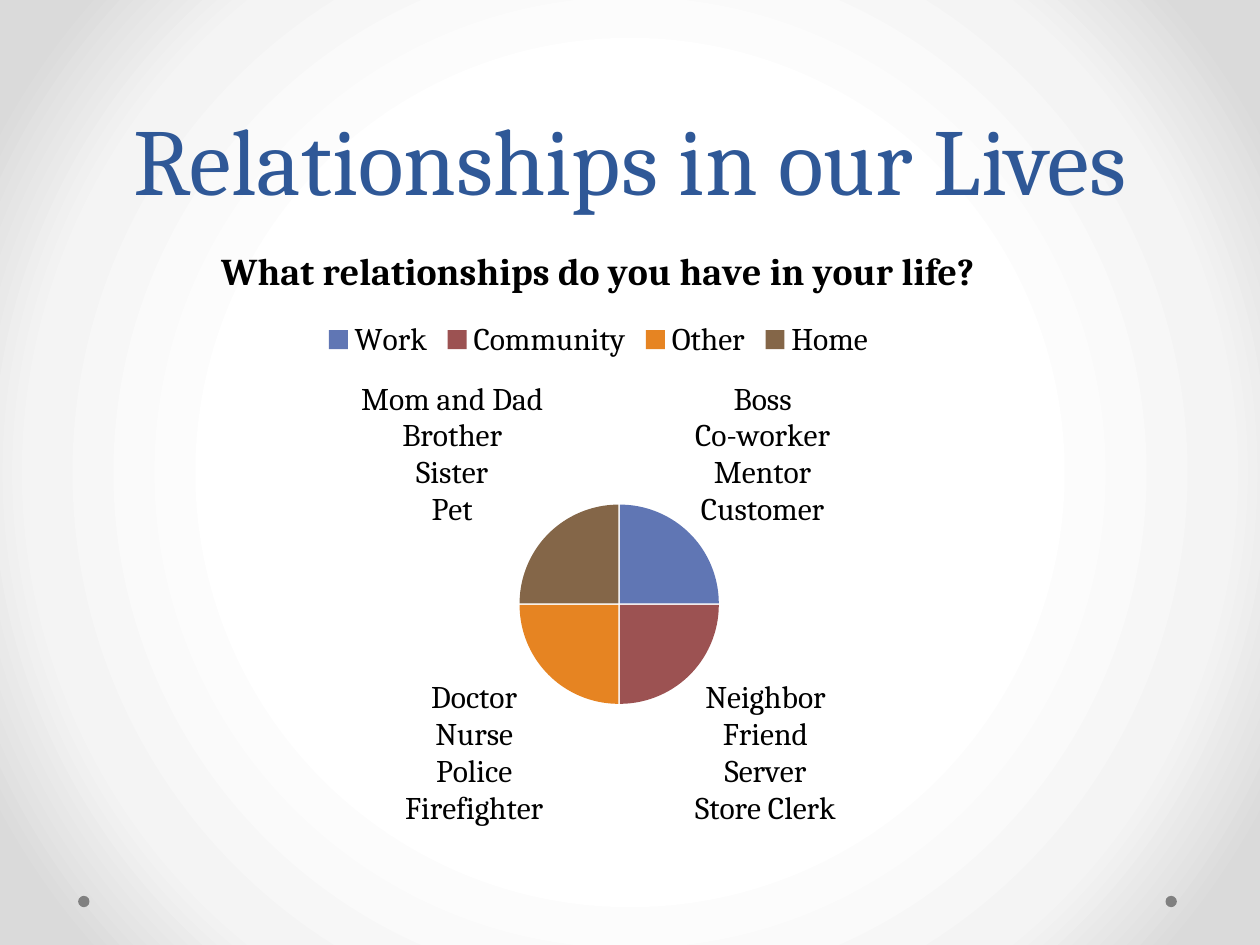
import pptx
import pptx.util
import pptx.chart.data
import pptx.dml.color
import pptx.enum.chart
import pptx.enum.shapes
import pptx.enum.text
import pptx.oxml
import pptx.oxml.ns

Inches = pptx.util.Inches
Pt = pptx.util.Pt

FONT = "Cambria"
COLORS = {
    "title": "2F5897",
    "text": "000000",
    "dot": "808080",
    "work": "6076B4",
    "community": "9C5252",
    "other": "E68422",
    "home": "846648",
}
BACKGROUND_STOPS = [(50, "FFFFFF"), (76, "F4F4F4"), (92, "DADADA")]
TITLE = "Relationships in our Lives"
CHART_TITLE = "What relationships do you have in your life?"
RELATIONSHIPS = [
    ("Work", 25, "work", ["Boss", "Co-worker", "Mentor", "Customer"]),
    ("Community", 25, "community", ["Neighbor", "Friend", "Server", "Store Clerk"]),
    ("Other", 25, "other", ["Doctor", "Nurse", "Police", "Firefighter"]),
    ("Home", 25, "home", ["Mom and Dad", "Brother", "Sister", "Pet"]),
]
DOT_LEFTS = [9.25, 0.62]


def rgb(name):
    return pptx.dml.color.RGBColor.from_string(COLORS[name])


def style_font(font, size, color, bold=False):
    font.name = FONT
    font.size = Pt(size)
    font.bold = bold
    font.color.rgb = rgb(color)


def add_span(para, text, size, color, bold=False):
    span = para.add_run()
    span.text = text
    style_font(span.font, size, color, bold)


def paint_background(page):
    page.background.fill.gradient()
    gradient = page.element.find(".//" + pptx.oxml.ns.qn("a:gradFill"))
    stops = "".join(
        f'<a:gs pos="{position * 1000}"><a:srgbClr val="{color}"/></a:gs>'
        for position, color in BACKGROUND_STOPS
    )
    radial = pptx.oxml.parse_xml(
        f'<a:gradFill {pptx.oxml.ns.nsdecls("a")} rotWithShape="1">'
        f"<a:gsLst>{stops}</a:gsLst>"
        '<a:path path="circle">'
        '<a:fillToRect l="50000" t="50000" r="50000" b="50000"/>'
        "</a:path></a:gradFill>"
    )
    gradient.getparent().replace(gradient, radial)


def add_dots(page):
    for left in DOT_LEFTS:
        dot = page.shapes.add_shape(
            pptx.enum.shapes.MSO_SHAPE.OVAL,
            Inches(left), Inches(7.11), Inches(0.09), Inches(0.09),
        )
        dot.shadow.inherit = False
        dot.fill.solid()
        dot.fill.fore_color.rgb = rgb("dot")
        dot.line.fill.background()


def fill_title(page):
    box = page.shapes.title
    box.left, box.top = Inches(0.5), Inches(0)
    box.width, box.height = Inches(9), Inches(1.75)
    box.text_frame.vertical_anchor = pptx.enum.text.MSO_ANCHOR.BOTTOM
    para = box.text_frame.paragraphs[0]
    para.alignment = pptx.enum.text.PP_ALIGN.CENTER
    para.line_spacing = Pt(58)
    add_span(para, TITLE, 54, "title")


def add_pie(page):
    data = pptx.chart.data.CategoryChartData()
    data.categories = [name for name, *_ in RELATIONSHIPS]
    data.add_series("Series 1", [value for _, value, *_ in RELATIONSHIPS])
    chart = page.shapes.add_chart(
        pptx.enum.chart.XL_CHART_TYPE.PIE,
        Inches(0.25), Inches(1.75), Inches(9), Inches(4.95), data,
    ).chart
    style_font(chart.font, 18, "text")

    chart.has_title = True
    add_span(chart.chart_title.text_frame.paragraphs[0], CHART_TITLE, 21.6, "text", True)
    chart.chart_title.include_in_layout = False
    chart.has_legend = True
    chart.legend.position = pptx.enum.chart.XL_LEGEND_POSITION.TOP
    chart.legend.include_in_layout = False
    style_font(chart.legend.font, 18, "text")

    plot = chart.plots[0]
    plot.vary_by_categories = True
    series = plot.series[0]
    series.format.line.fill.background()
    outline = chart.element.find(
        ".//" + pptx.oxml.ns.qn("c:ser") + "/" + pptx.oxml.ns.qn("c:spPr")
    )
    outline.addnext(pptx.oxml.parse_xml(
        f'<c:explosion {pptx.oxml.ns.nsdecls("c")} val="1"/>'
    ))

    labels = series.data_labels
    labels.show_value = False
    labels.show_percentage = True
    style_font(labels.font, 18, "text")
    for index, (_, _, color, people) in enumerate(RELATIONSHIPS):
        point = series.points[index]
        point.format.fill.solid()
        point.format.fill.fore_color.rgb = rgb(color)
        frame = point.data_label.text_frame
        for row, person in enumerate(people):
            para = frame.add_paragraph() if row else frame.paragraphs[0]
            add_span(para, person, 18, "text")
        point.data_label.position = pptx.enum.chart.XL_LABEL_POSITION.OUTSIDE_END


def main():
    deck = pptx.Presentation()
    deck.slide_width, deck.slide_height = Inches(10), Inches(7.5)
    page = deck.slides.add_slide(deck.slide_layouts[5])
    paint_background(page)
    add_dots(page)
    fill_title(page)
    add_pie(page)
    deck.save("out.pptx")


if __name__ == "__main__":
    main()
